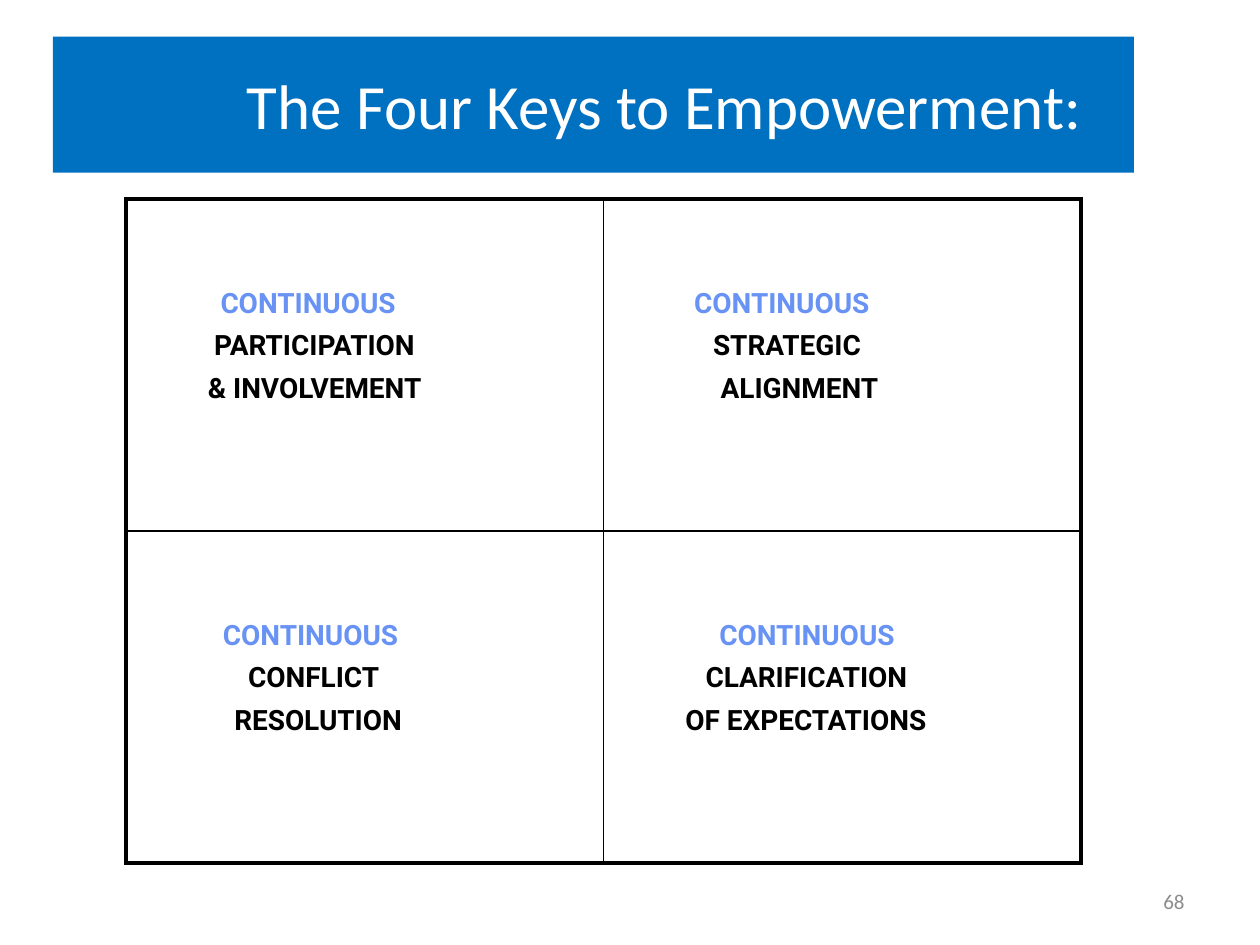
from lxml import etree
from pptx import Presentation
from pptx.dml.color import RGBColor
from pptx.enum import shapes, text
from pptx.oxml.ns import qn
from pptx.util import Inches, Pt

COLORS = {"banner": "0070C0", "white": "FFFFFF", "accent": "6893F4",
          "ink": "000000", "muted": "8C8C8C"}

TITLE = "The Four Keys to Empowerment:"
PAGE_NUMBER = "68"
# Each cell holds lines of (text, left indent in inches)
KEYS = [
    [
        [("CONTINUOUS", 0.64), ("PARTICIPATION", 0.59), ("& INVOLVEMENT", 0.54)],
        [("CONTINUOUS", 0.61), ("STRATEGIC", 0.76), ("ALIGNMENT", 0.82)],
    ],
    [
        [("CONTINUOUS", 0.66), ("CONFLICT", 0.86), ("RESOLUTION", 0.75)],
        [("CONTINUOUS", 0.81), ("CLARIFICATION", 0.7), ("OF EXPECTATIONS", 0.54)],
    ],
]
OUTER, INNER = 2.25, 1


def add_run(p, words, size, color, font="Calibri", bold=False):
    r = p.add_run()
    r.text = words
    r.font.size = Pt(size)
    r.font.name = font
    r.font.bold = bold
    r.font.color.rgb = RGBColor.from_string(COLORS[color])


def set_borders(cell, widths):
    """Draw the left, right, top and bottom borders, widths in points."""
    tc_pr = cell._tc.get_or_add_tcPr()
    for i, (side, width) in enumerate(zip("LRTB", widths)):
        ln = etree.Element(qn(f"a:ln{side}"), w=str(Pt(width)))
        fill = etree.SubElement(ln, qn("a:solidFill"))
        etree.SubElement(fill, qn("a:srgbClr"), val=COLORS["ink"])
        tc_pr.insert(i, ln)


def add_banner(s):
    sp = s.shapes.add_shape(shapes.MSO_SHAPE.RECTANGLE, Inches(0.42),
                            Inches(0.29), Inches(8.58), Inches(1.08))
    sp.shadow.inherit = False
    sp.fill.solid()
    sp.fill.fore_color.rgb = RGBColor.from_string(COLORS["banner"])
    sp.line.fill.background()
    tf = sp.text_frame
    tf.margin_left = Inches(1.22)
    tf.vertical_anchor = text.MSO_ANCHOR.MIDDLE
    p = tf.paragraphs[0]
    p.alignment = text.PP_ALIGN.CENTER
    add_run(p, TITLE, 36, "white")


def fill_cell(cell, lines):
    cell.fill.background()
    cell.margin_left = cell.margin_right = Inches(0.11)
    cell.margin_top, cell.margin_bottom = Inches(0.7), Inches(0.05)
    tf = cell.text_frame
    for i, (words, indent) in enumerate(lines):
        p = tf.add_paragraph() if i else tf.paragraphs[0]
        p.space_before = Pt(5.8)
        p._p.get_or_add_pPr().set("marL", str(Inches(indent)))
        add_run(p, words, 16, "ink" if i else "accent", "Roboto", True)


def add_key_table(s):
    n_rows, n_cols = len(KEYS), len(KEYS[0])
    table = s.shapes.add_table(n_rows, n_cols, Inches(1), Inches(1.58),
                               Inches(7.58), Inches(5.27)).table
    table.first_row = table.horz_banding = False
    for r, row in enumerate(KEYS):
        for c, lines in enumerate(row):
            cell = table.cell(r, c)
            fill_cell(cell, lines)
            on_edge = (c == 0, c == n_cols - 1, r == 0, r == n_rows - 1)
            set_borders(cell, [OUTER if edge else INNER for edge in on_edge])


def add_page_number(s):
    tf = s.shapes.add_textbox(Inches(7.17), Inches(6.95),
                              Inches(2.33), Inches(0.4)).text_frame
    tf.word_wrap = True
    tf.vertical_anchor = text.MSO_ANCHOR.MIDDLE
    p = tf.paragraphs[0]
    p.alignment = text.PP_ALIGN.RIGHT
    add_run(p, PAGE_NUMBER, 12, "muted")


def main():
    prs = Presentation()
    prs.slide_width, prs.slide_height = Inches(10), Inches(7.5)
    s = prs.slides.add_slide(prs.slide_layouts[6])
    add_page_number(s)
    add_banner(s)
    add_key_table(s)
    prs.save("out.pptx")


if __name__ == "__main__":
    main()
